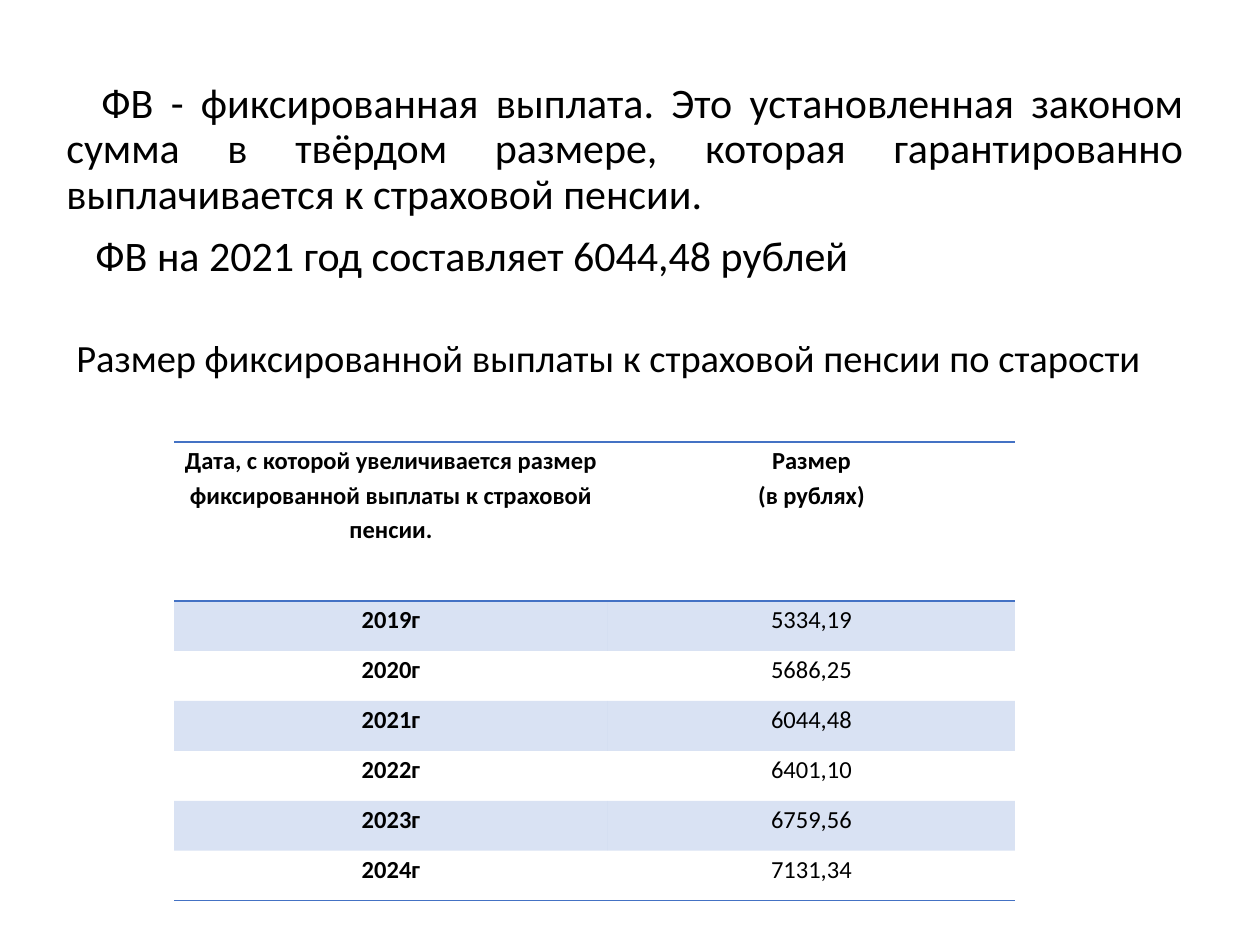
from lxml import etree
from pptx import Presentation, util as u
from pptx.dml.color import RGBColor
from pptx.enum import text
from pptx.oxml.ns import qn

PX = 914400 // 126
COLORS = {"ink": "000000", "accent": "4472C4"}
BAND_OPACITY = 20
NO_STYLE = "{2D5ABB26-0587-4C30-8999-92F81FD0307C}"

DEFINITION = [
    ("ФВ - фиксированная выплата. Это установленная законом сумма в твёрдом "
     "размере, которая гарантированно выплачивается к страховой пенсии.", 35),
    ("ФВ на 2021 год составляет 6044,48 рублей", 29),
]
CAPTION = "Размер фиксированной выплаты к страховой пенсии по старости"
PAYMENTS = [
    ("Дата, с которой увеличивается размер фиксированной выплаты к страховой пенсии.",
     "Размер\n(в рублях)"),
    ("2019г", "5334,19"),
    ("2020г", "5686,25"),
    ("2021г", "6044,48"),
    ("2022г", "6401,10"),
    ("2023г", "6759,56"),
    ("2024г", "7131,34"),
]


def px(*lengths):
    return [u.Emu(length * PX) for length in lengths]


def apply(target, formats):
    for name, value in formats.items():
        setattr(target, name, value)


def style(paragraph, size, bold=False, **formats):
    apply(paragraph, formats)
    apply(paragraph.font, {"name": "Calibri", "size": u.Pt(size), "bold": bold})
    paragraph.font.color.rgb = RGBColor.from_string(COLORS["ink"])


def add_definition(slide, box):
    frame = slide.shapes.add_textbox(*px(*box)).text_frame
    frame.word_wrap = True
    frame.text = "\n".join(sentence for sentence, _ in DEFINITION)
    for i, (paragraph, (_, indent)) in enumerate(zip(frame.paragraphs, DEFINITION)):
        paragraph._p.get_or_add_pPr().set("indent", str(indent * PX))
        style(paragraph, 24, alignment=text.PP_ALIGN.JUSTIFY, line_spacing=0.9,
              space_before=u.Pt(10 if i else 0))


def add_caption(slide, box):
    frame = slide.shapes.add_textbox(*px(*box)).text_frame
    apply(frame, {"word_wrap": False, "vertical_anchor": text.MSO_ANCHOR.MIDDLE,
                  "auto_size": text.MSO_AUTO_SIZE.SHAPE_TO_FIT_TEXT, "text": CAPTION})
    style(frame.paragraphs[0], 22)


def add_rule(cell, side):
    line = etree.SubElement(cell._tc.get_or_add_tcPr(), qn(f"a:{side}"), w=str(u.Pt(1)))
    fill = etree.SubElement(line, qn("a:solidFill"))
    etree.SubElement(fill, qn("a:srgbClr"), val=COLORS["accent"])


def fill_cell(cell, banded):
    if not banded:
        cell.fill.background()
        return
    cell.fill.solid()
    cell.fill.fore_color.rgb = RGBColor.from_string(COLORS["accent"])
    color = cell._tc.tcPr.find(".//" + qn("a:solidFill") + "/" + qn("a:srgbClr"))
    etree.SubElement(color, qn("a:alpha"), val=str(BAND_OPACITY * 1000))


def add_payments(slide, box, header_height=159, date_width=434):
    left, top, width, height = box
    last = len(PAYMENTS) - 1
    table = slide.shapes.add_table(last + 1, 2, *px(*box)).table
    table._tbl.tblPr.find(qn("a:tableStyleId")).text = NO_STYLE
    for column, column_width in zip(table.columns, px(date_width, width - date_width)):
        column.width = column_width
    year_height = (height - header_height) // last
    for r, values in enumerate(PAYMENTS):
        table.rows[r].height = px(year_height if r else header_height)[0]
        for c, value in enumerate(values):
            cell = table.cell(r, c)
            side_margin = px(9)[0]
            apply(cell, {"margin_left": side_margin, "margin_right": side_margin,
                         "margin_top": 0, "margin_bottom": 0, "text": value})
            for paragraph in cell.text_frame.paragraphs:
                style(paragraph, 14, bold=r == 0 or c == 0,
                      alignment=text.PP_ALIGN.CENTER, line_spacing=1.15)
            # Rules around the header and under the last year
            if r == 0:
                add_rule(cell, "lnT")
            if r in (0, last):
                add_rule(cell, "lnB")
            fill_cell(cell, banded=r % 2 == 1)


def main():
    deck = Presentation()
    deck.slide_width, deck.slide_height = px(1260, 945)
    slide = deck.slides.add_slide(deck.slide_layouts[6])
    add_definition(slide, (54, 76, 1142, 377))
    add_payments(slide, (174, 442, 841, 459))
    add_caption(slide, (64, 328, 1101, 59))
    deck.save("out.pptx")


if __name__ == "__main__":
    main()
